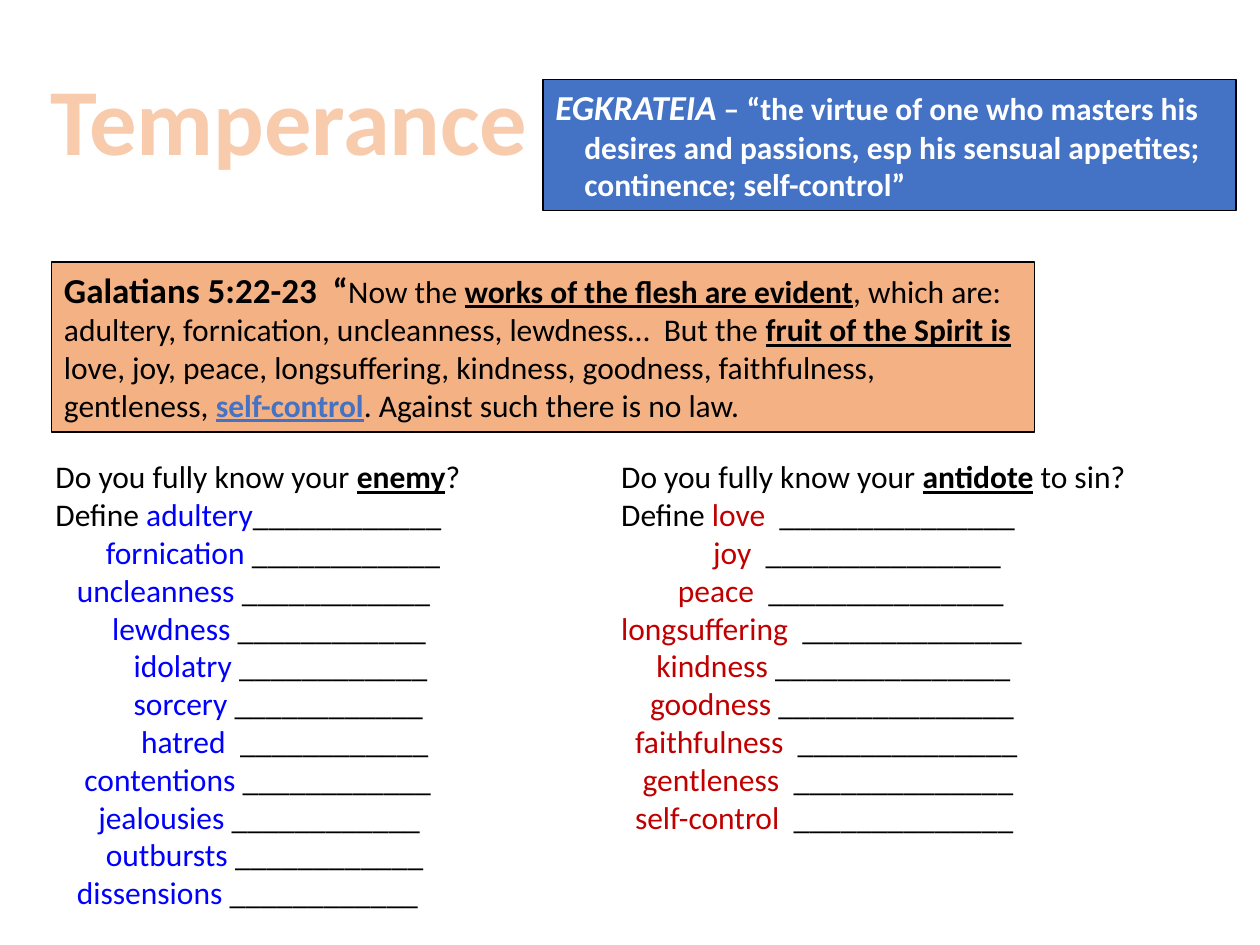
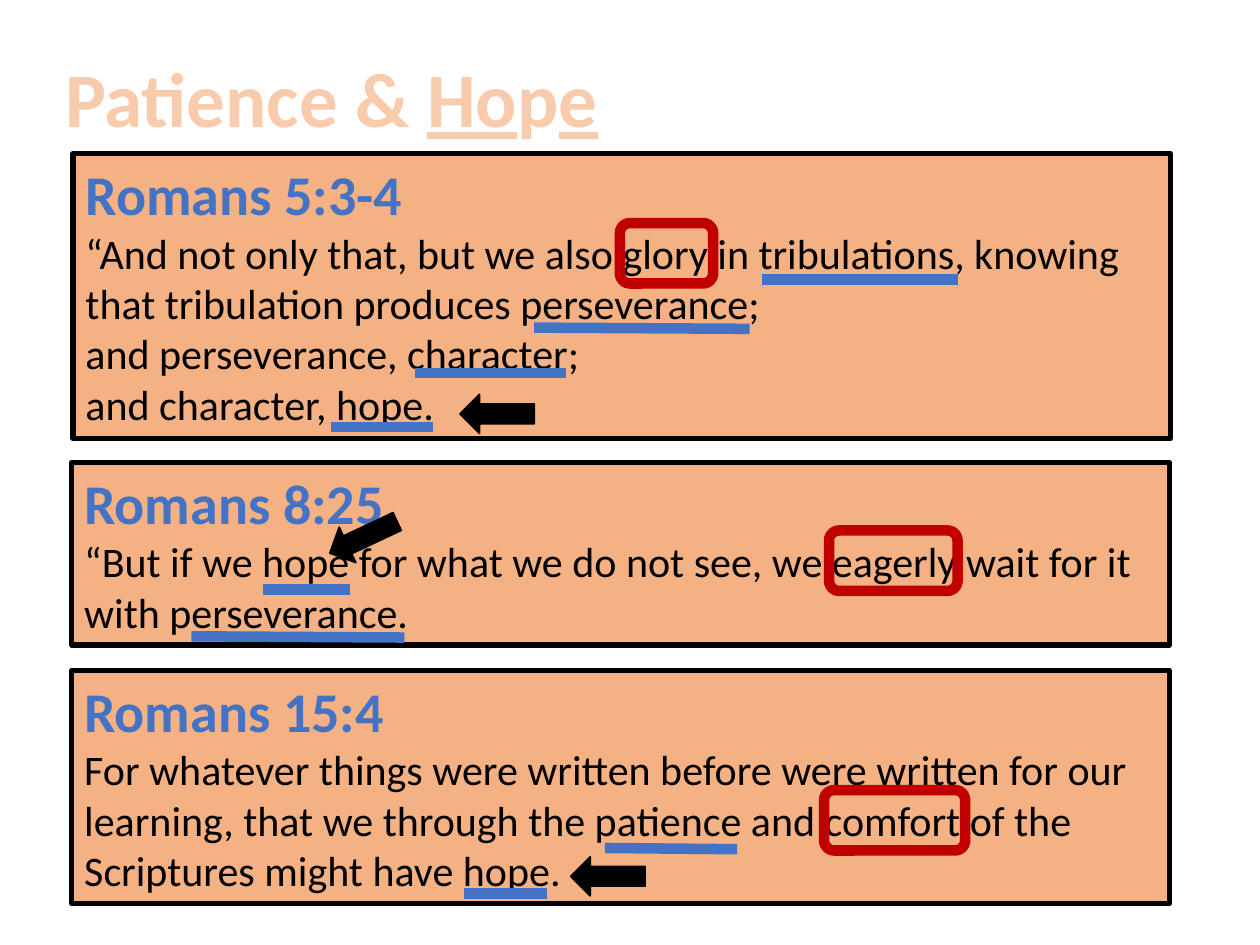
"""Build two Bible study slides on temperance, patience and hope."""
from lxml import etree
from pptx import Presentation
from pptx.dml.color import RGBColor
from pptx.enum.shapes import MSO_CONNECTOR, MSO_SHAPE
from pptx.enum.text import MSO_ANCHOR, MSO_AUTO_SIZE, PP_ALIGN
from pptx.oxml.ns import qn
from pptx.util import Inches, Pt

RECT, ROUND = MSO_SHAPE.RECTANGLE, MSO_SHAPE.ROUNDED_RECTANGLE
ARROW, LINE = MSO_SHAPE.LEFT_ARROW, MSO_CONNECTOR.STRAIGHT
TOP, MID = MSO_ANCHOR.TOP, MSO_ANCHOR.MIDDLE
LEFT, CENTER = PP_ALIGN.LEFT, PP_ALIGN.CENTER
FIXED = MSO_AUTO_SIZE.NONE

FONT = "Calibri"
BLACK, WHITE, BLUE, RED = "000000", "FFFFFF", "4472C4", "C00000"
PEACH, ORANGE, SAND, VICE = "F8CBAD", "ED7D31", "F4B183", "0000FF"

PLAIN = {"size": 18, "color": BLACK}
KEY = PLAIN | {"bold": True, "underline": True}
LEAD = {"size": 20, "color": BLACK, "bold": True}
SELF = KEY | {"color": BLUE}
GREEK = LEAD | {"color": WHITE, "italic": True}
SENSE = {"size": 18, "color": WHITE, "bold": True}
HEAD = {"size": 32, "color": BLUE, "bold": True}
VERSE = {"size": 24, "color": BLACK}
BIG = {"size": 54, "color": PEACH, "bold": True}
MAIN = BIG | {"size": 44}
UNDER = MAIN | {"underline": True}

TITLES = [
    ((0.28, 0.43, 4.03, 1.01), [("Temperance", BIG)]),
    ((0.16, 0.35, 4.94, 0.84),
     [("Patience & ", MAIN), ("Ho", UNDER), ("p", MAIN), ("e", UNDER)]),
]

SENSES = [[
    ("EGKRATEIA", GREEK),
    (" – “the virtue of one who masters his\vdesires and passions, "
     "esp his sensual appetites;\vcontinence; self-control”", SENSE),
]]

PASSAGE = [[
    ("Galatians 5:22-23  “", LEAD),
    ("Now the ", PLAIN),
    ("works of the flesh are evident", KEY),
    (", which are: adultery, fornication, uncleanness, lewdness…  But the ",
     PLAIN),
    ("fruit of the Spirit is ", KEY),
    ("love, joy, peace, longsuffering, kindness, goodness, faithfulness, "
     "gentleness, ", PLAIN),
    ("self-control", SELF),
    (". Against such there is no law.", PLAIN),
]]

# Each word: indent in inches, word, gap, count of blanks
LISTS = [
    ((0.34, 3.58, 3.9, 3.74), VICE, "enemy", "?", [
        (0, "adultery", "", 12), (0.4, "fornication", " ", 12),
        (0.17, "uncleanness", " ", 12), (0.45, "lewdness", " ", 12),
        (0.62, "idolatry", " ", 12), (0.62, "sorcery", " ", 12),
        (0.68, "hatred", "  ", 12), (0.23, "contentions", " ", 12),
        (0.34, "jealousies", " ", 12), (0.4, "outbursts", " ", 12),
        (0.17, "dissensions", " ", 12)]),
    ((4.83, 3.58, 4.75, 3.13), RED, "antidote", " to sin?", [
        (0, "love", "  ", 15), (0.73, "joy", "  ", 15),
        (0.45, "peace", "  ", 15), (0, "longsuffering", "  ", 14),
        (0.28, "kindness", " ", 15), (0.23, "goodness", " ", 15),
        (0.11, "faithfulness", "  ", 14), (0.17, "gentleness", "  ", 14),
        (0.11, "self-control", "  ", 14)]),
]

PANELS = [
    ((0.58, 1.22, 8.71, 2.26), "Romans 5:3-4",
     ["“And not only that, but we also glory in tribulations, knowing that "
      "tribulation produces perseverance;",
      "and perseverance, character;", "and character, hope."]),
    ((0.57, 3.67, 8.71, 1.45), "Romans 8:25",
     ["“But if we hope for what we do not see, we eagerly wait for it with "
      "perseverance."]),
    ((0.57, 5.32, 8.71, 1.85), "Romans 15:4",
     ["For whatever things were written before were written for our "
      "learning, that we through the patience and comfort of the Scriptures "
      "might have hope."]),
]
STROKES = [
    (6.05, 2.22, 7.6, 2.22), (4.24, 2.6, 5.95, 2.61),
    (3.29, 2.96, 4.49, 2.96), (2.63, 3.39, 3.44, 3.39),
    (2.09, 4.68, 2.78, 4.68), (1.52, 5.05, 3.21, 5.06),
    (4.8, 6.73, 5.85, 6.74), (3.68, 7.09, 4.34, 7.09),
]
RINGS = [(4.92, 1.77, 0.74), (6.58, 4.21, 1.02), (6.54, 6.27, 1.12)]
ARROWS = [(3.65, 3.13, 0), (2.59, 4.11, 334.8), (4.53, 6.8, 0)]


def tint(code):
    return RGBColor.from_string(code)


def assign(item, values):
    for name, value in values.items():
        setattr(item, name, value)


def place(shape, box):
    names = ("left", "top", "width", "height")
    assign(shape, dict(zip(names, map(Inches, box))))


def style(run, form):
    form = {"name": FONT, "bold": False} | form
    form["size"] = Pt(form["size"])
    run.font.color.rgb = tint(form.pop("color"))
    assign(run.font, form)


def write(frame, paras, indents=(), hang=0, align=LEFT, **opts):
    assign(frame, {"auto_size": FIXED, "word_wrap": True,
                   "vertical_anchor": TOP} | opts)
    for num, runs in enumerate(paras):
        para = frame.paragraphs[0] if num == 0 else frame.add_paragraph()
        assign(para, {"alignment": align, "space_before": Pt(0)})
        props = para._p.get_or_add_pPr()
        left = indents[num] if indents else hang
        props.set("marL", str(Inches(left)))
        props.set("indent", str(Inches(-hang)))
        etree.SubElement(props, qn("a:buNone"))
        for text, form in runs:
            for part, line in enumerate(text.split("\v")):
                if part:
                    para.add_line_break()
                run = para.add_run()
                run.text = line
                style(run, form)


def draw(slide, kind, box, fill, line, width):
    shape = slide.shapes.add_shape(kind, *map(Inches, box))
    shape.shadow.inherit = False
    if fill:
        shape.fill.solid()
        shape.fill.fore_color.rgb = tint(fill)
    else:
        shape.fill.background()
    shape.line.color.rgb = tint(line)
    shape.line.width = Pt(width)
    return shape


def stroke(slide, ends):
    line = slide.shapes.add_connector(LINE, *map(Inches, ends))
    line.line.color.rgb = tint(BLUE)
    line.line.width = Pt(6)
    etree.SubElement(line._element.spPr, qn("a:effectLst"))


def start(deck, layout, title):
    slide = deck.slides.add_slide(deck.slide_layouts[layout])
    box, runs = title
    head = slide.shapes.title
    place(head, box)
    write(head.text_frame, [runs], align=CENTER, word_wrap=False,
          vertical_anchor=MID)
    for run in head.text_frame.paragraphs[0].runs:
        edge = etree.Element(qn("a:ln"), w=str(Pt(1.75)))
        fill = etree.SubElement(edge, qn("a:solidFill"))
        etree.SubElement(fill, qn("a:srgbClr"), val=ORANGE)
        run._r.get_or_add_rPr().insert(0, edge)
    return slide


def temper(deck):
    slide = start(deck, 3, TITLES[0])
    note = draw(slide, RECT, (4.31, 0.63, 5.5, 1.04), BLUE, BLACK, 0.75)
    write(note.text_frame, SENSES, hang=0.23)
    text = draw(slide, RECT, (0.41, 2.08, 7.8, 1.35), SAND, BLACK, 0.75)
    write(text.text_frame, PASSAGE)
    for num, (box, hue, key, tail, words) in enumerate(LISTS, 1):
        paras = [[("Do you fully know your ", PLAIN), (key, KEY),
                  (tail, PLAIN)]]
        for _, word, gap, count in words:
            paras.append([(word, PLAIN | {"color": hue}),
                          (gap + "_" * count, PLAIN)])
        paras[1].insert(0, ("Define ", PLAIN))
        body = slide.placeholders[num]
        place(body, box)
        write(body.text_frame, paras, [0] + [word[0] for word in words])


def hope(deck):
    slide = start(deck, 5, TITLES[1])
    for box, head, lines in PANELS:
        panel = draw(slide, RECT, box, SAND, BLACK, 3)
        write(panel.text_frame,
              [[(head, HEAD)]] + [[(line, VERSE)] for line in lines])
    for ends in STROKES:
        stroke(slide, ends)
    for left, top, turn in ARROWS:
        arrow = draw(slide, ARROW, (left, top, 0.59, 0.31), BLACK, BLACK, 1)
        arrow.rotation = turn
    for left, top, width in RINGS:
        draw(slide, ROUND, (left, top, width, 0.48), None, RED, 6)


def main():
    deck = Presentation()
    assign(deck, {"slide_width": Inches(10), "slide_height": Inches(7.5)})
    temper(deck)
    hope(deck)
    deck.save("out.pptx")


if __name__ == "__main__":
    main()
